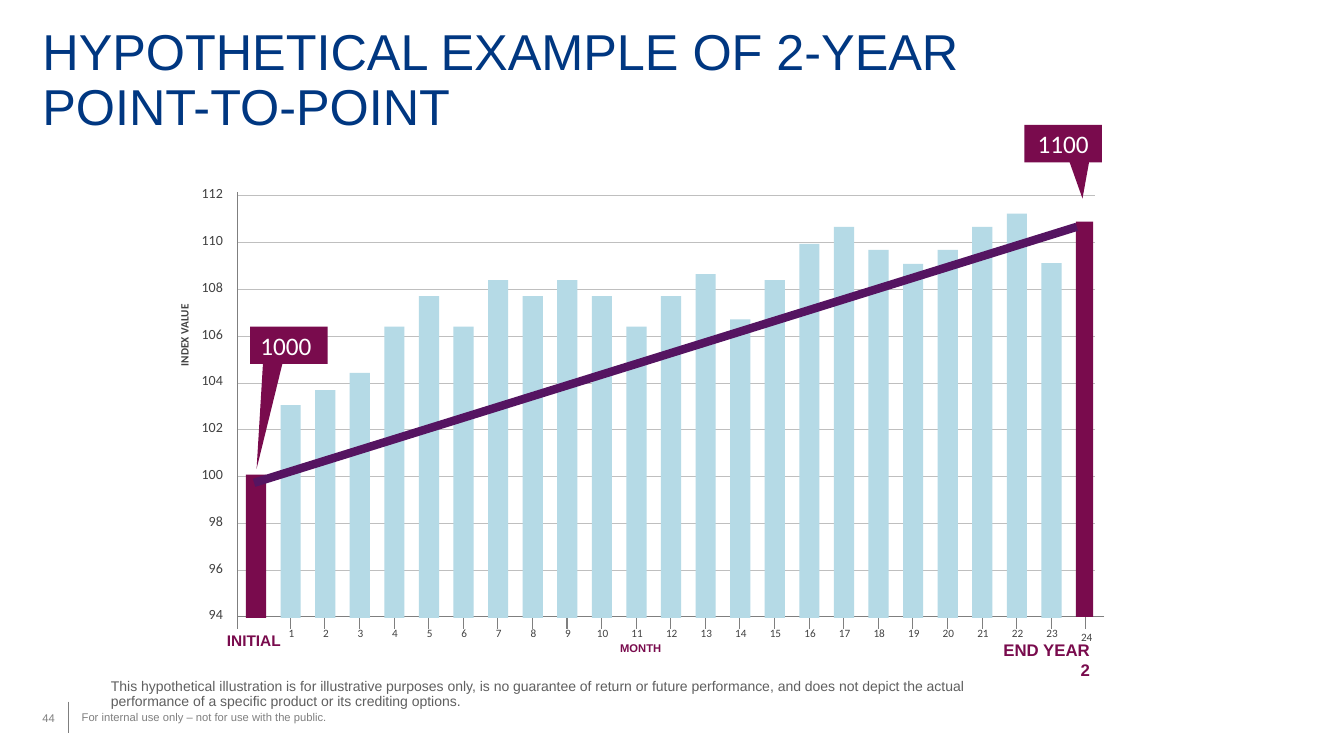
from dataclasses import dataclass

from lxml import etree
from pptx import Presentation
from pptx.dml.color import RGBColor
from pptx.enum.shapes import MSO_CONNECTOR, MSO_SHAPE
from pptx.enum.text import MSO_ANCHOR, MSO_AUTO_SIZE, PP_ALIGN
from pptx.oxml.ns import qn
from pptx.util import Inches, Pt

LEFT, CENTER, RIGHT = PP_ALIGN.LEFT, PP_ALIGN.CENTER, PP_ALIGN.RIGHT
TOP, MIDDLE, BOTTOM = MSO_ANCHOR.TOP, MSO_ANCHOR.MIDDLE, MSO_ANCHOR.BOTTOM
RECTANGLE, CALLOUT = MSO_SHAPE.RECTANGLE, MSO_SHAPE.RECTANGULAR_CALLOUT
STRAIGHT = MSO_CONNECTOR.STRAIGHT
NO_AUTOFIT = MSO_AUTO_SIZE.NONE
TITLE_ONLY = 5


@dataclass(frozen=True)
class Theme:
    heading_font: str = "Arial"
    chart_font: str = "Calibri"
    navy: str = "003781"
    maroon: str = "790B4D"
    purple: str = "551461"
    pale_blue: str = "B5DAE6"
    white: str = "FFFFFF"
    ink: str = "414141"
    note_grey: str = "5F5F5F"
    axis_grey: str = "7F7F7F"
    grid_grey: str = "BFBFBF"
    title_size: float = 36
    callout_size: float = 18
    end_size: float = 12
    initial_size: float = 11
    body_size: float = 10
    small_size: float = 8
    thin: float = 0.75
    thick: float = 6


THEME = Theme()

AXIS_LEFT, AXIS_RIGHT, AXIS_TOP, AXIS_BOTTOM = 2.36, 10.95, 1.9, 6.12
GRID_RIGHT = 10.86
INDEX_MIN, INDEX_MAX, INDEX_STEP = 94, 112, 2
INCHES_PER_POINT = 0.232
FIRST_BAR, FIRST_TICK, MONTH_STEP = 2.44, 2.88, 0.343
BAR_WIDTH, BAR_BOTTOM = 0.2, 6.13
TICK_TOP, TICK_BOTTOM = 6.08, 6.24
LAST_MONTH = 24
INDEX_VALUES = [
    100.08, 103.05, 103.7, 104.43, 106.41, 107.71, 106.41, 108.4, 107.71,
    108.4, 107.71, 106.41, 107.71, 108.66, 106.72, 108.4, 109.95, 110.68,
    109.69, 109.09, 109.69, 110.68, 111.24, 109.13, 110.9,
]
CALLOUTS = [
    ("1100", 10.16, 1.24, (0.249, 1.473)),
    ("1000 ", 2.48, 3.24, (-0.415, 3.316)),
]


def write_text(shape, text, size, color, font=THEME.heading_font, bold=False,
               align=LEFT, anchor=TOP, insets=(0, 0, 0, 0), spacing=1.0, wrap=True):
    frame = shape.text_frame
    frame.auto_size = NO_AUTOFIT
    frame.word_wrap = wrap
    frame.vertical_anchor = anchor
    frame.margin_left, frame.margin_top, frame.margin_right, frame.margin_bottom = map(Inches, insets)
    paragraph = frame.paragraphs[0]
    paragraph.text = text
    paragraph.alignment = align
    paragraph.line_spacing = spacing
    paragraph.font.name = font
    paragraph.font.size = Pt(size)
    paragraph.font.bold = bold
    paragraph.font.color.rgb = RGBColor.from_string(color)


def index_height(value):
    return AXIS_BOTTOM - (value - INDEX_MIN) * INCHES_PER_POINT


class SlideBuilder:
    def __init__(self, slide, theme):
        self.slide = slide
        self.theme = theme

    def title(self, text, left, top, width, height):
        shape = self.slide.shapes.title
        shape.left, shape.top, shape.width, shape.height = map(Inches, (left, top, width, height))
        write_text(shape, text, self.theme.title_size, self.theme.navy, anchor=BOTTOM, spacing=0.9)

    def text(self, text, left, top, width, height, rotation=0, **text_format):
        shape = self.slide.shapes.add_textbox(*map(Inches, (left, top, width, height)))
        shape.rotation = rotation
        write_text(shape, text, **text_format)

    def chart_label(self, text, left, top, width, height, **text_format):
        settings = dict(size=self.theme.small_size, color=self.theme.ink,
                        font=self.theme.chart_font, align=CENTER, spacing=0.9,
                        insets=(0.1, 0.05, 0.1, 0.05), wrap=False)
        self.text(text, left, top, width, height, **{**settings, **text_format})

    def block(self, kind, color, left, top, width, height):
        shape = self.slide.shapes.add_shape(kind, *map(Inches, (left, top, width, height)))
        shape.shadow.inherit = False
        shape.fill.solid()
        shape.fill.fore_color.rgb = RGBColor.from_string(color)
        shape.line.fill.background()
        return shape

    def callout(self, text, left, top, tip):
        shape = self.block(CALLOUT, self.theme.maroon, left, top, 0.77, 0.37)
        shape.adjustments[0], shape.adjustments[1] = tip
        write_text(shape, text, self.theme.callout_size, self.theme.white,
                   font=self.theme.chart_font, align=CENTER, anchor=MIDDLE,
                   insets=(0.1, 0.05, 0.1, 0.05))

    def line(self, start_x, start_y, end_x, end_y, color, width):
        connector = self.slide.shapes.add_connector(
            STRAIGHT, *map(Inches, (start_x, start_y, end_x, end_y)))
        connector.line.color.rgb = RGBColor.from_string(color)
        connector.line.width = Pt(width)
        etree.SubElement(connector._element.spPr, qn("a:effectLst"))

    def open_outline(self, points, color, width):
        corners = [(Inches(x), Inches(y)) for x, y in points]
        builder = self.slide.shapes.build_freeform(*corners[0])
        builder.add_line_segments(corners[1:], close=False)
        shape = builder.convert_to_shape()
        shape.shadow.inherit = False
        shape.fill.background()
        shape.line.color.rgb = RGBColor.from_string(color)
        shape.line.width = Pt(width)


def draw_axes(builder):
    theme = builder.theme
    for index in range(INDEX_MIN, INDEX_MAX + 1, INDEX_STEP):
        height = index_height(index)
        if index > INDEX_MIN:
            builder.line(AXIS_LEFT, height, GRID_RIGHT, height, theme.grid_grey, theme.thin)
        builder.text(str(index), 1.72, height - 0.11, 0.49, 0.17, size=theme.body_size,
                     color=theme.ink, font=theme.chart_font, align=RIGHT)
    month_ticks = [FIRST_TICK + MONTH_STEP * month for month in range(LAST_MONTH)]
    for tick in [AXIS_LEFT] + month_ticks:
        builder.line(tick, TICK_TOP, tick, TICK_BOTTOM, theme.axis_grey, theme.thin)
    builder.open_outline([(AXIS_RIGHT, AXIS_BOTTOM), (AXIS_LEFT, AXIS_BOTTOM), (AXIS_LEFT, AXIS_TOP)],
                         theme.axis_grey, theme.thin)
    for month, tick in enumerate(month_ticks, start=1):
        width = 0.14 if month < 9 else 0.36
        top = 6.22 if month == LAST_MONTH else 6.18
        builder.chart_label(str(month), tick + 0.01 - width / 2, top, width, 0.13)
    builder.chart_label("INDEX VALUE", 1.33, 3.21, 1.01, 0.23, rotation=270, bold=True, anchor=MIDDLE)
    builder.chart_label("MONTH", 6.03, 6.33, 0.65, 0.13, bold=True,
                        font=theme.heading_font, color=theme.maroon)
    builder.text("INITIAL", 2.25, 6.2, 0.59, 0.24, size=theme.initial_size,
                 color=theme.maroon, bold=True, insets=(0, 0.06, 0, 0))
    builder.text("END YEAR 2", 9.88, 6.29, 0.93, 0.46, size=theme.end_size,
                 color=theme.maroon, bold=True, align=RIGHT, insets=(0, 0.06, 0, 0))


def draw_bars(builder):
    theme = builder.theme
    for month, value in enumerate(INDEX_VALUES):
        color = theme.maroon if month in (0, LAST_MONTH) else theme.pale_blue
        width = 0.17 if month == LAST_MONTH else BAR_WIDTH
        bottom = AXIS_BOTTOM if month == LAST_MONTH else BAR_BOTTOM
        top = index_height(value)
        builder.block(RECTANGLE, color, FIRST_BAR + MONTH_STEP * month, top, width, bottom - top)
    builder.line(2.52, 4.79, 10.68, 2.25, theme.purple, theme.thick)


def draw_footer(builder):
    theme = builder.theme
    builder.text("This hypothetical illustration is for illustrative purposes only, is no guarantee of "
                 "return or future performance, and does not depict the actual performance of a "
                 "specific product or its crediting options.",
                 1.1, 6.71, 9.1, 0.33, size=theme.body_size, color=theme.note_grey,
                 anchor=BOTTOM, spacing=0.9)
    builder.text("44", 0.42, 6.92, 0.4, 0.4, size=theme.small_size, color=theme.axis_grey,
                 anchor=MIDDLE, insets=(0, 0.06, 0, 0.06))
    builder.line(0.68, 6.96, 0.68, 7.27, theme.axis_grey, theme.thin)
    builder.text("For internal use only – not for use with the public.", 0.81, 6.99, 11.91, 0.26,
                 size=theme.small_size, color=theme.axis_grey, insets=(0, 0.06, 0.12, 0.06))


def main():
    presentation = Presentation()
    presentation.slide_width, presentation.slide_height = Inches(13.33), Inches(7.5)
    slide = presentation.slides.add_slide(presentation.slide_layouts[TITLE_ONLY])
    builder = SlideBuilder(slide, THEME)
    builder.title("HYPOTHETICAL EXAMPLE OF 2-YEAR POINT-TO-POINT", 0.42, 0.46, 10.19, 0.89)
    draw_axes(builder)
    for callout in CALLOUTS:
        builder.callout(*callout)
    draw_bars(builder)
    draw_footer(builder)
    presentation.save("out.pptx")


if __name__ == "__main__":
    main()
